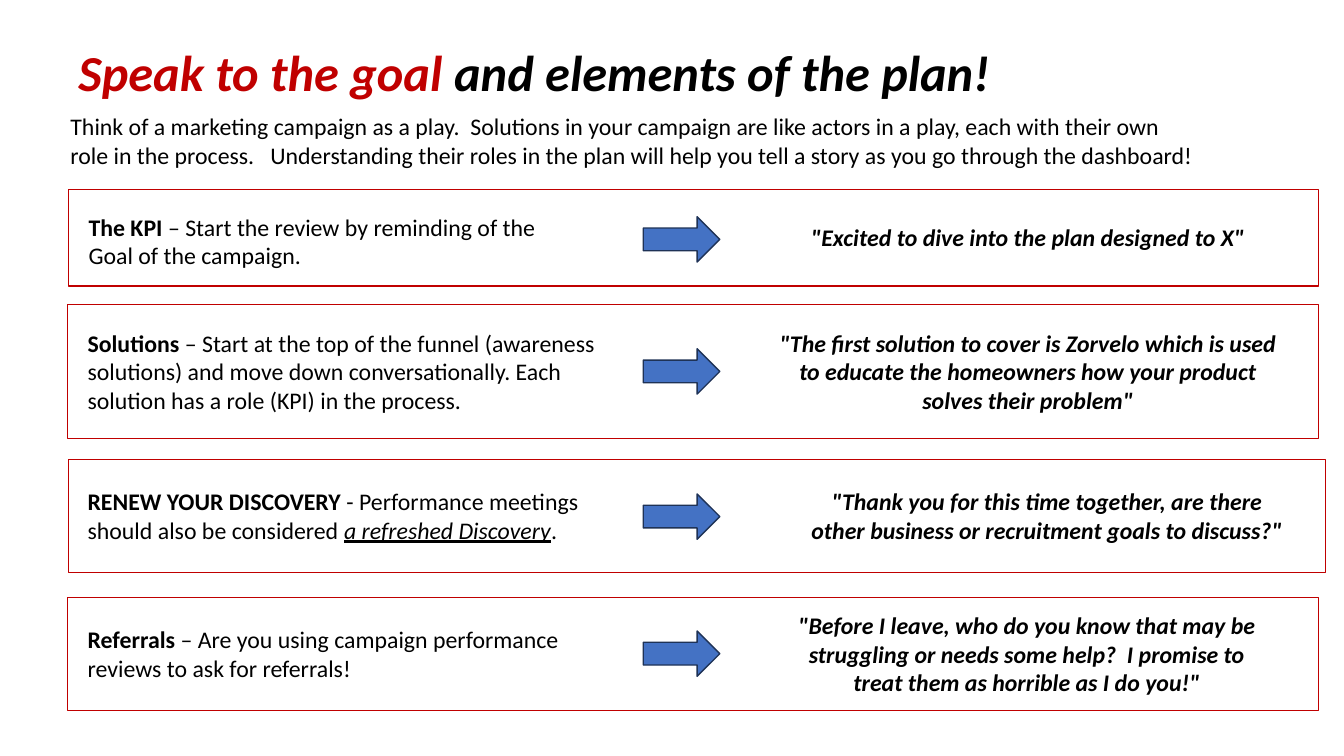
from pptx import Presentation, util as u
from pptx.dml.color import RGBColor
from pptx.enum import shapes as s, text as t

RED, BLUE, NAVY, BLACK = "C00000", "4472C4", "1E3256", "000000"

deck = Presentation()
deck.slide_width, deck.slide_height = u.Inches(13.33), u.Inches(7.5)
slide = deck.slides.add_slide(deck.slide_layouts[6])


def add_box(preset, left, top, width, height, line, fill=None):
    box = slide.shapes.add_shape(preset, *map(u.Inches, (left, top, width, height)))
    box.shadow.inherit = False
    box.line.color.rgb = RGBColor.from_string(line)
    box.line.width = u.Pt(1)
    if fill:
        box.fill.solid()
        box.fill.fore_color.rgb = RGBColor.from_string(fill)
    else:
        box.fill.background()


def add_text(left, top, width, height, runs, size=17, align=t.PP_ALIGN.LEFT, wrap=True):
    """Each run is (wording, style letters b/i/u, colour)."""
    frame = slide.shapes.add_textbox(*map(u.Inches, (left, top, width, height))).text_frame
    frame.word_wrap = wrap
    paragraph = frame.paragraphs[0]
    paragraph.alignment = align
    for wording, style, colour in runs:
        run = paragraph.add_run()
        run.text = wording
        font = run.font
        font.name, font.size = "Calibri", u.Pt(size)
        font.bold, font.italic, font.underline = (letter in style for letter in "biu")
        font.color.rgb = RGBColor.from_string(colour)


# Title and introduction
add_text(0.68, 0.36, 9.33, 0.71,
         [("Speak to the goal ", "bi", RED), ("and elements of the plan!", "bi", BLACK)],
         size=36, wrap=False)
add_text(0.6, 1.06, 11.4, 0.67,
         [("Think of a marketing campaign as a play.  Solutions in your campaign are like "
           "actors in a play, each with their own role in the process.   Understanding their "
           "roles in the plan will help you tell a story as you go through the dashboard!",
           "", BLACK)])

# Talking points: frame, advice, arrow top, quote
ARROW_LEFT, ARROW_WIDTH, ARROW_HEIGHT = 6.38, 0.76, 0.45
talking_points = [
    ((0.68, 1.88, 12.4, 0.96),
     (0.78, 2.06, 5.03, 0.96),
     [("The KPI", "b"),
      (" – Start the review by reminding of the Goal of the campaign.", "")],
     2.15,
     (7.24, 2.16, 5.91, 0.39),
     '"Excited to dive into the plan designed to X"'),
    ((0.67, 3.02, 12.41, 1.33),
     (0.77, 3.21, 5.52, 0.96),
     [("Solutions", "b"),
      (" – Start at the top of the funnel (awareness solutions) and move down "
       "conversationally. Each solution has a role (KPI) in the process.", "")],
     3.46,
     (7.52, 3.21, 5.35, 0.96),
     '"The first solution to cover is Zorvelo which is used to educate the homeowners '
     'how your product solves their problem"'),
    ((0.68, 4.56, 12.47, 1.12),
     (0.77, 4.78, 5.49, 0.67),
     [("RENEW YOUR DISCOVERY", "b"),
      (" - Performance meetings should also be considered ", ""),
      ("a refreshed Discovery", "iu"), (".", "")],
     4.9,
     (7.9, 4.78, 4.97, 0.67),
     '"Thank you for this time together, are there other business or recruitment goals '
     'to discuss?"'),
    ((0.67, 5.93, 12.41, 1.12),
     (0.77, 6.15, 5.04, 0.67),
     [("Referrals", "b"),
      (" – Are you using campaign performance reviews to ask for referrals!", "")],
     6.26,
     (7.7, 6.01, 4.97, 0.96),
     '"Before I leave, who do you know that may be struggling or needs some help?  '
     'I promise to treat them as horrible as I do you!"'),
]
for frame_area, advice_area, advice, arrow_top, quote_area, quote in talking_points:
    add_box(s.MSO_SHAPE.RECTANGLE, *frame_area, RED)
    add_text(*advice_area, [(wording, style, BLACK) for wording, style in advice])
    add_text(*quote_area, [(quote, "bi", BLACK)], align=t.PP_ALIGN.CENTER)
    add_box(s.MSO_SHAPE.RIGHT_ARROW, ARROW_LEFT, arrow_top, ARROW_WIDTH, ARROW_HEIGHT,
            NAVY, BLUE)

deck.save("out.pptx")
